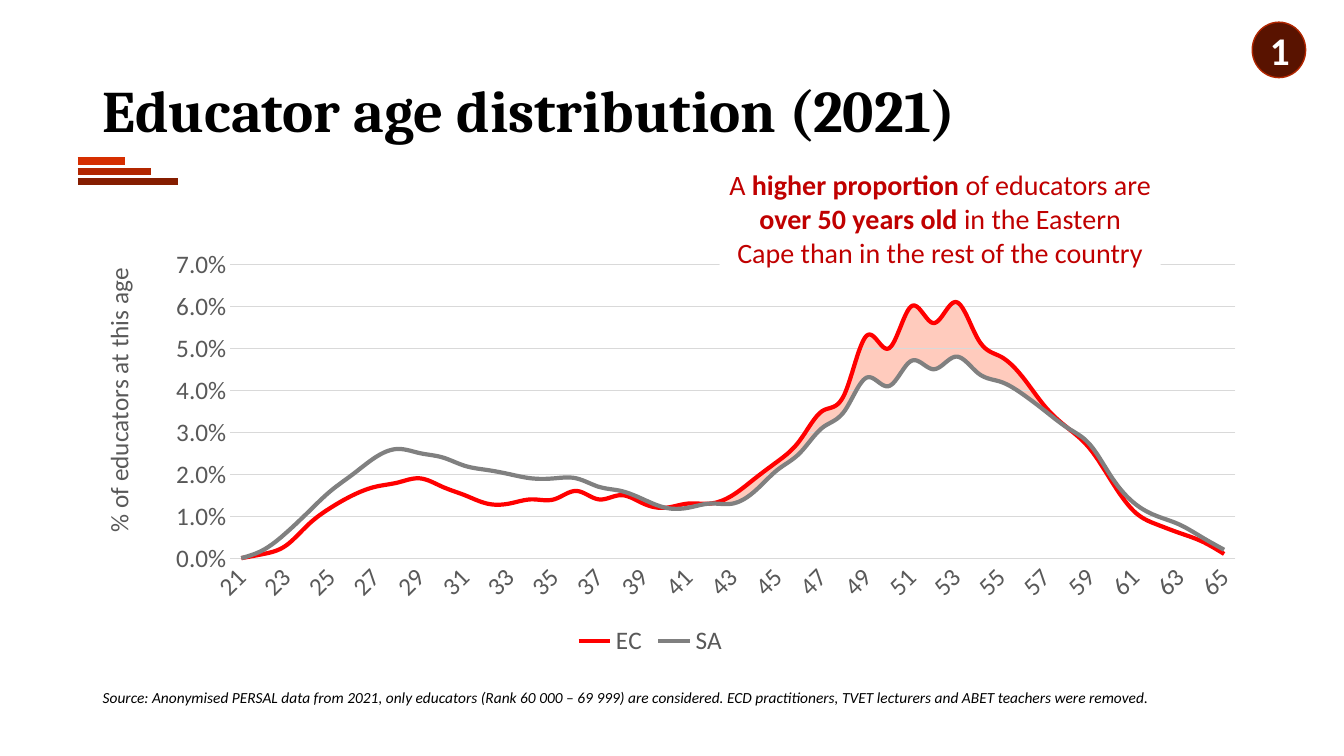
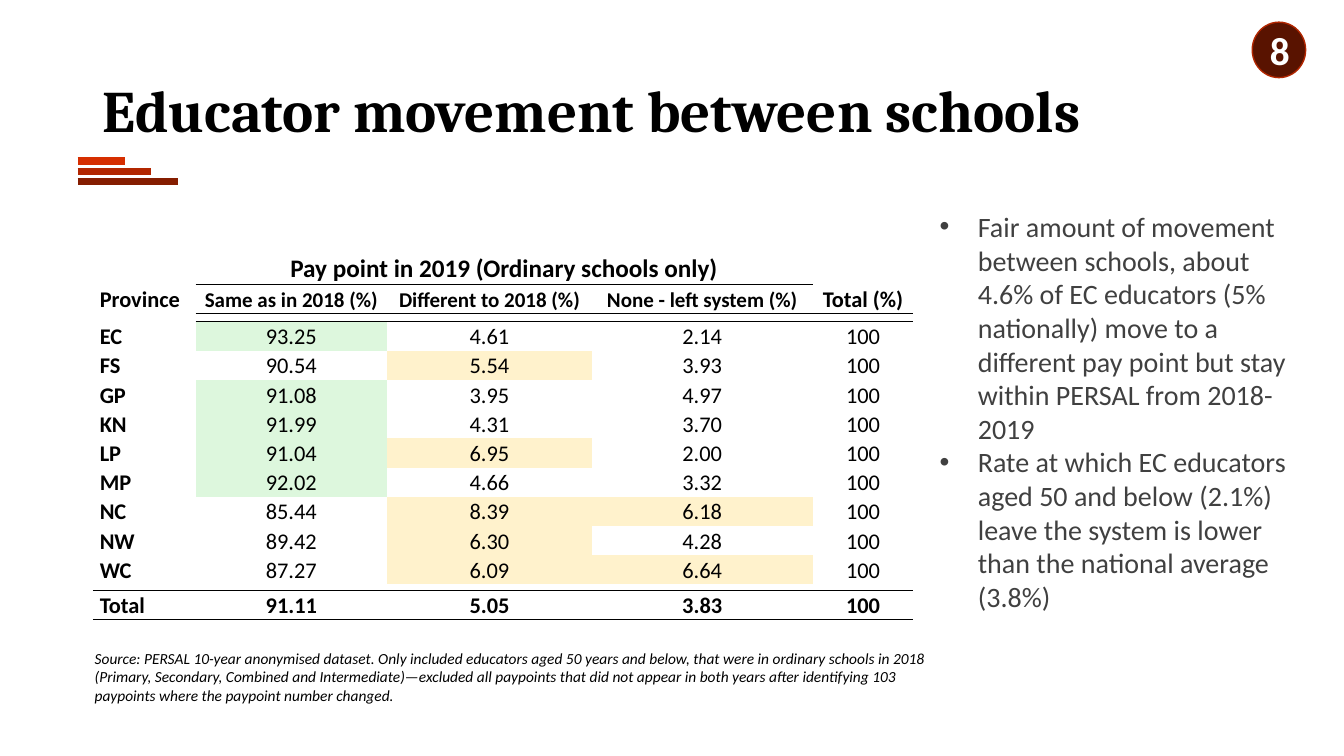
"""Build two slides on educator ages and educator movement between schools."""
from dataclasses import dataclass

from lxml import etree
from pptx import Presentation
from pptx import util as u
from pptx.chart.data import CategoryChartData
from pptx.dml.color import RGBColor
from pptx.enum import chart as ec, shapes, text
from pptx.oxml import ns

BODY, HEADING = "Calibri", "Cambria"
BLACK, WHITE, GREY, GRID = "000000", "FFFFFF", "595959", "D9D9D9"
GREEN, AMBER, CRIMSON = "DDF7DD", "FFF2CC", "C00000"
CENTER, LEFT = text.PP_ALIGN.CENTER, text.PP_ALIGN.LEFT
TOP, MIDDLE, BOTTOM = (text.MSO_ANCHOR.TOP, text.MSO_ANCHOR.MIDDLE,
                       text.MSO_ANCHOR.BOTTOM)


@dataclass(frozen=True)
class Style:
    size: float
    color: str = BLACK
    face: str = BODY
    bold: bool = False
    italic: bool = False


@dataclass(frozen=True)
class Box:
    left: float
    top: float
    width: float
    height: float

    def lengths(self):
        return [u.Inches(v) for v in
                (self.left, self.top, self.width, self.height)]


@dataclass(frozen=True)
class Stripe:
    top: float
    width: float
    color: str


STRIPES = (Stripe(1.8, 1, "851D00"), Stripe(1.7, 0.73, "B22600"),
           Stripe(1.6, 0.47, "D62E00"))
TITLE_BOX = Box(0.92, 0.4, 11.5, 1.45)
BADGE_BOX = Box(12.42, 0.22, 0.53, 0.55)
TITLE = Style(42, face=HEADING, bold=True)
SOURCE = Style(11, italic=True)
BADGE = Style(28, WHITE, bold=True)
AXIS = Style(18, GREY)

CHART_BOX = Box(0.48, 2.08, 11.94, 4.48)
PLOT = (0.151, 0.121, 0.835, 0.651)
AGES = range(21, 66)
BAND_AGES = (42, 58)
MAX_SHARE = 0.07
EC_SHARES = (
    0, .001, .003, .008, .012, .015, .017, .018, .019, .017, .015, .013,
    .013, .014, .014, .016, .014, .015, .013, .012, .013, .013, .015, .019,
    .023, .028, .035, .039, .053, .05, .06, .056, .061, .052, .048, .043,
    .036, .031, .026, .018, .011, .008, .006, .004, .001)
SA_SHARES = (
    0, .002, .006, .011, .016, .02, .024, .026, .025, .024, .022, .021,
    .02, .019, .019, .019, .017, .016, .014, .012, .012, .013, .013, .016,
    .021, .025, .031, .035, .043, .041, .047, .045, .048, .044, .042, .039,
    .035, .031, .027, .019, .013, .01, .008, .005, .002)
LINES = (("EC", EC_SHARES, "FF0000"), ("SA", SA_SHARES, "808080"))

COLUMN_WIDTHS = (1.02, 1.9, 2.03, 2.19, 1)
HEADERS = ("Province", "Same as in 2018 (%)", "Different to 2018 (%)",
           "None - left system (%)", "Total (%)")
PROVINCES = (
    ("EC", "93.25", "4.61", "2.14"), ("FS", "90.54", "5.54", "3.93"),
    ("GP", "91.08", "3.95", "4.97"), ("KN", "91.99", "4.31", "3.70"),
    ("LP", "91.04", "6.95", "2.00"), ("MP", "92.02", "4.66", "3.32"),
    ("NC", "85.44", "8.39", "6.18"), ("NW", "89.42", "6.30", "4.28"),
    ("WC", "87.27", "6.09", "6.64"))
TOTALS = ("Total", "91.11", "5.05", "3.83")
HIGHLIGHTS = {1: (91, GREEN), 2: (5.05, AMBER), 3: (5.05, AMBER)}
FIRST_PROVINCE = 3
TOTAL_ROW = FIRST_PROVINCE + len(PROVINCES) + 1
RULES = {0: range(1, 4), 1: range(1, 5), TOTAL_ROW - 1: range(5),
         TOTAL_ROW: range(5)}


def rgb(color: str) -> RGBColor:
    return RGBColor.from_string(color)


def set_font(font, style: Style) -> None:
    font.size, font.name = u.Pt(style.size), style.face
    font.bold, font.italic = style.bold, style.italic
    font.color.rgb = rgb(style.color)


def add_run(paragraph, words: str, style: Style) -> None:
    run = paragraph.add_run()
    run.text = words
    set_font(run.font, style)


def add_text(slide, box: Box, words: str, style: Style, anchor=TOP):
    frame = slide.shapes.add_textbox(*box.lengths()).text_frame
    frame.word_wrap, frame.vertical_anchor = True, anchor
    add_run(frame.paragraphs[0], words, style)
    return frame


def add_panel(slide, kind, box: Box, fill: str):
    panel = slide.shapes.add_shape(kind, *box.lengths())
    panel.shadow.inherit = False
    panel.fill.solid()
    panel.fill.fore_color.rgb = rgb(fill)
    panel.line.fill.background()
    panel.text_frame.word_wrap = True
    panel.text_frame.vertical_anchor = MIDDLE
    panel.text_frame.paragraphs[0].alignment = CENTER
    return panel


def add_frame(prs, title: str):
    """Add a blank slide with the shared stripes and title."""
    slide = prs.slides.add_slide(prs.slide_layouts[6])
    for stripe in STRIPES:
        line = slide.shapes.add_connector(
            shapes.MSO_CONNECTOR.STRAIGHT, u.Inches(0.77),
            u.Inches(stripe.top), u.Inches(0.77 + stripe.width),
            u.Inches(stripe.top))
        line.line.color.rgb = rgb(stripe.color)
        line.line.width = u.Pt(5.5)
        properties = line._element.find(ns.qn("p:spPr"))
        etree.SubElement(properties, ns.qn("a:effectLst"))
    heading = add_text(slide, TITLE_BOX, title, TITLE, MIDDLE)
    heading.paragraphs[0].line_spacing = 0.9
    return slide


def add_badge(slide, number: str) -> None:
    badge = add_panel(slide, shapes.MSO_SHAPE.OVAL, BADGE_BOX, "591300")
    badge.line.color.rgb = rgb("B22600")
    badge.line.width = u.Pt(1)
    add_run(badge.text_frame.paragraphs[0], number, BADGE)


def curve(shares, steps: int = 6) -> list:
    """Sample a smooth curve through the shares, in slide inches."""
    left, top, width, height = PLOT
    start, end = (age - AGES[0] for age in BAND_AGES)
    points = []
    for step in range((end - start) * steps + 1):
        index, part = divmod(step, steps)
        index, t = index + start, part / steps
        a, b, c, d = shares[index - 1:index + 3]
        share = b + t / 2 * (c - a + t * (2 * a - 5 * b + 4 * c - d
                                          + t * (3 * (b - c) + d - a)))
        across = (index + t + 0.5) / len(AGES)
        down = 1 - share / MAX_SHARE
        points.append((
            u.Inches(CHART_BOX.left + CHART_BOX.width * (left + width * across)),
            u.Inches(CHART_BOX.top + CHART_BOX.height * (top + height * down))))
    return points


def add_band(slide) -> None:
    outline = curve(EC_SHARES) + curve(SA_SHARES)[::-1]
    builder = slide.shapes.build_freeform(*outline[0])
    builder.add_line_segments(outline[1:], close=True)
    band = builder.convert_to_shape()
    band.shadow.inherit = False
    band.fill.solid()
    band.fill.fore_color.rgb = rgb("FFCBBD")
    band.line.fill.background()


def place(parent, **settings) -> None:
    """Give a chart part a manual layout."""
    layout = parent.find(ns.qn("c:layout"))
    if layout is None:
        layout = etree.Element(ns.qn("c:layout"))
        parent.insert(0, layout)
    manual = etree.SubElement(layout, ns.qn("c:manualLayout"))
    for tag, value in settings.items():
        etree.SubElement(manual, ns.qn(f"c:{tag}")).set("val", str(value))


def add_age_chart(slide) -> None:
    data = CategoryChartData(number_format="0.0%")
    data.categories = [str(age) for age in AGES]
    for name, shares, _ in LINES:
        data.add_series(name, shares)
    chart = slide.shapes.add_chart(
        ec.XL_CHART_TYPE.LINE, *CHART_BOX.lengths(), data).chart
    set_font(chart.font, AXIS)
    chart.has_title = False
    chart.has_legend = True
    chart.legend.position = ec.XL_LEGEND_POSITION.BOTTOM
    chart.legend.include_in_layout = False
    set_font(chart.legend.font, AXIS)
    chart.plots[0].vary_by_categories = False
    for series, (_, _, color) in zip(chart.plots[0].series, LINES):
        series.smooth = True
        series.marker.style = ec.XL_MARKER_STYLE.NONE
        series.format.line.color.rgb = rgb(color)
        series.format.line.width = u.Pt(3)
    ages, shares = chart.category_axis, chart.value_axis
    for axis in (ages, shares):
        axis.major_tick_mark = axis.minor_tick_mark = ec.XL_TICK_MARK.NONE
        set_font(axis.tick_labels.font, AXIS)
    shares.minimum_scale, shares.maximum_scale = 0, MAX_SHARE
    shares.major_unit = 0.01
    shares.tick_labels.number_format = "0.0%"
    shares.tick_labels.number_format_is_linked = False
    shares.format.line.fill.background()
    for line in (ages.format.line, shares.major_gridlines.format.line):
        line.color.rgb = rgb(GRID)
        line.width = u.Pt(0.75)
    ages._element.find(ns.qn("c:txPr")).find(
        ns.qn("a:bodyPr")).set("rot", "-2700000")
    caption = shares.axis_title
    add_run(caption.text_frame.paragraphs[0], "% of educators at this age", AXIS)
    place(caption._element, xMode="edge", yMode="edge", x=0.04, y=0.12)
    plot_area = chart._chartSpace.chart.find(ns.qn("c:plotArea"))
    place(plot_area, layoutTarget="inner", xMode="edge", yMode="edge",
          **dict(zip("xywh", PLOT)))


def add_rule(cell, tag: str) -> None:
    """Draw a black rule on one side of a table cell."""
    properties = cell._tc.get_or_add_tcPr()
    line = etree.Element(ns.qn(f"a:{tag}"), w=str(u.Pt(1)))
    fill = etree.SubElement(line, ns.qn("a:solidFill"))
    etree.SubElement(fill, ns.qn("a:srgbClr"), val=BLACK)
    properties.insert(0 if tag == "lnT" else
                      len(properties.findall(ns.qn("a:lnT"))), line)


def fill_cell(cell, words: str, size: float, bold: bool, align) -> None:
    paragraph = cell.text_frame.paragraphs[0]
    paragraph.alignment, paragraph.line_spacing = align, 1.07
    add_run(paragraph, words, Style(size, bold=bold))


def add_movement_table(slide) -> None:
    heights = ([0.33, 0.29, 0.08] + [0.29] * len(PROVINCES) + [0.06, 0.29])
    box = Box(0.92, 2.49, sum(COLUMN_WIDTHS), sum(heights))
    table = slide.shapes.add_table(
        len(heights), len(COLUMN_WIDTHS), *box.lengths()).table
    table.first_row = table.horz_banding = False
    table._tbl.tblPr.find(ns.qn("a:tableStyleId")).text = (
        "{2D5ABB26-0587-4C30-8999-92F81FD0307C}")
    for column, width in zip(table.columns, COLUMN_WIDTHS):
        column.width = u.Inches(width)
    for row, height in zip(table.rows, heights):
        row.height = u.Inches(height)
    for cell in table.iter_cells():
        cell.fill.background()
        cell.vertical_anchor = BOTTOM
        cell.margin_top = cell.margin_bottom = 0
        cell.margin_left = cell.margin_right = u.Inches(0.07)
    table.cell(0, 1).merge(table.cell(0, 3))
    fill_cell(table.cell(0, 1), "Pay point in 2019 (Ordinary schools only)",
              18, True, CENTER)
    rows = {1: HEADERS, TOTAL_ROW: TOTALS + ("100",)}
    rows.update((FIRST_PROVINCE + i, province + ("100",))
                for i, province in enumerate(PROVINCES))
    for r, values in rows.items():
        is_province = FIRST_PROVINCE <= r < TOTAL_ROW
        for c, value in enumerate(values):
            cell = table.cell(r, c)
            size = 15 if r == 1 and c in HIGHLIGHTS else 16
            fill_cell(cell, value, size, c == 0 or not is_province,
                      CENTER if c else LEFT)
            if is_province and c in HIGHLIGHTS:
                limit, color = HIGHLIGHTS[c]
                if float(value) > limit:
                    cell.fill.solid()
                    cell.fill.fore_color.rgb = rgb(color)
    for r in (FIRST_PROVINCE - 1, TOTAL_ROW - 1):
        for cell in table.rows[r].cells:
            etree.SubElement(cell.text_frame.paragraphs[0]._p,
                             ns.qn("a:endParaRPr"), sz="100")
    for r, columns in RULES.items():
        for c in columns:
            add_rule(table.cell(r, c), "lnB")
            if r < TOTAL_ROW:
                add_rule(table.cell(r + 1, c), "lnT")


def add_bullets(slide, box: Box, points, style: Style) -> None:
    frame = add_text(slide, box, points[0], style)
    for point in points[1:]:
        add_run(frame.add_paragraph(), point, style)
    for paragraph in frame.paragraphs:
        properties = paragraph._p.get_or_add_pPr()
        properties.set("marL", str(u.Inches(0.38)))
        properties.set("indent", str(u.Inches(-0.38)))
        etree.SubElement(properties, ns.qn("a:buFont"), typeface="Arial")
        etree.SubElement(properties, ns.qn("a:buChar"), char="•")


def build_age_slide(prs) -> None:
    slide = add_frame(prs, "Educator age distribution (2021)")
    add_band(slide)
    add_age_chart(slide)
    add_badge(slide, "1")
    add_text(slide, Box(0.92, 6.73, 11.5, 0.37), "Source: Anonymised PERSAL data from 2021, only educators (Rank 60 000 – 69 999) are considered. ECD practitioners, TVET lecturers and ABET teachers were removed.", SOURCE, MIDDLE)
    callout = add_panel(slide, shapes.MSO_SHAPE.ROUNDED_RECTANGLE,
                        Box(7.06, 1.64, 4.53, 1.05), WHITE)
    callout.adjustments[0] = 0.235
    for words, bold in (("A ", False), ("higher proportion ", True),
                        ("of educators are ", False),
                        ("over 50 years old ", True),
                        ("in the Eastern Cape than in the rest of the country",
                         False)):
        add_run(callout.text_frame.paragraphs[0], words,
                Style(20, CRIMSON, bold=bold))


def build_movement_slide(prs) -> None:
    slide = add_frame(prs, "Educator movement between schools")
    add_bullets(slide, Box(9.22, 2.03, 3.65, 5.1), (
        "Fair amount of movement between schools, about 4.6% of EC educators (5% nationally) move to a different pay point but stay within PERSAL from 2018-2019",
        "Rate at which EC educators aged 50 and below (2.1%) leave the system is lower than the national average (3.8%)"), Style(20, "404040"))
    add_text(slide, Box(0.84, 6.39, 8.59, 0.74), "Source: PERSAL 10-year anonymised dataset. Only included educators aged 50 years and below, that were in ordinary schools in 2018 (Primary, Secondary, Combined and Intermediate)—excluded all paypoints that did not appear in both years after identifying 103 paypoints where the paypoint number changed.", SOURCE)
    add_movement_table(slide)
    add_badge(slide, "8")


def main() -> None:
    prs = Presentation()
    prs.slide_width, prs.slide_height = u.Inches(13.33), u.Inches(7.5)
    build_age_slide(prs)
    build_movement_slide(prs)
    prs.save("out.pptx")


if __name__ == "__main__":
    main()
